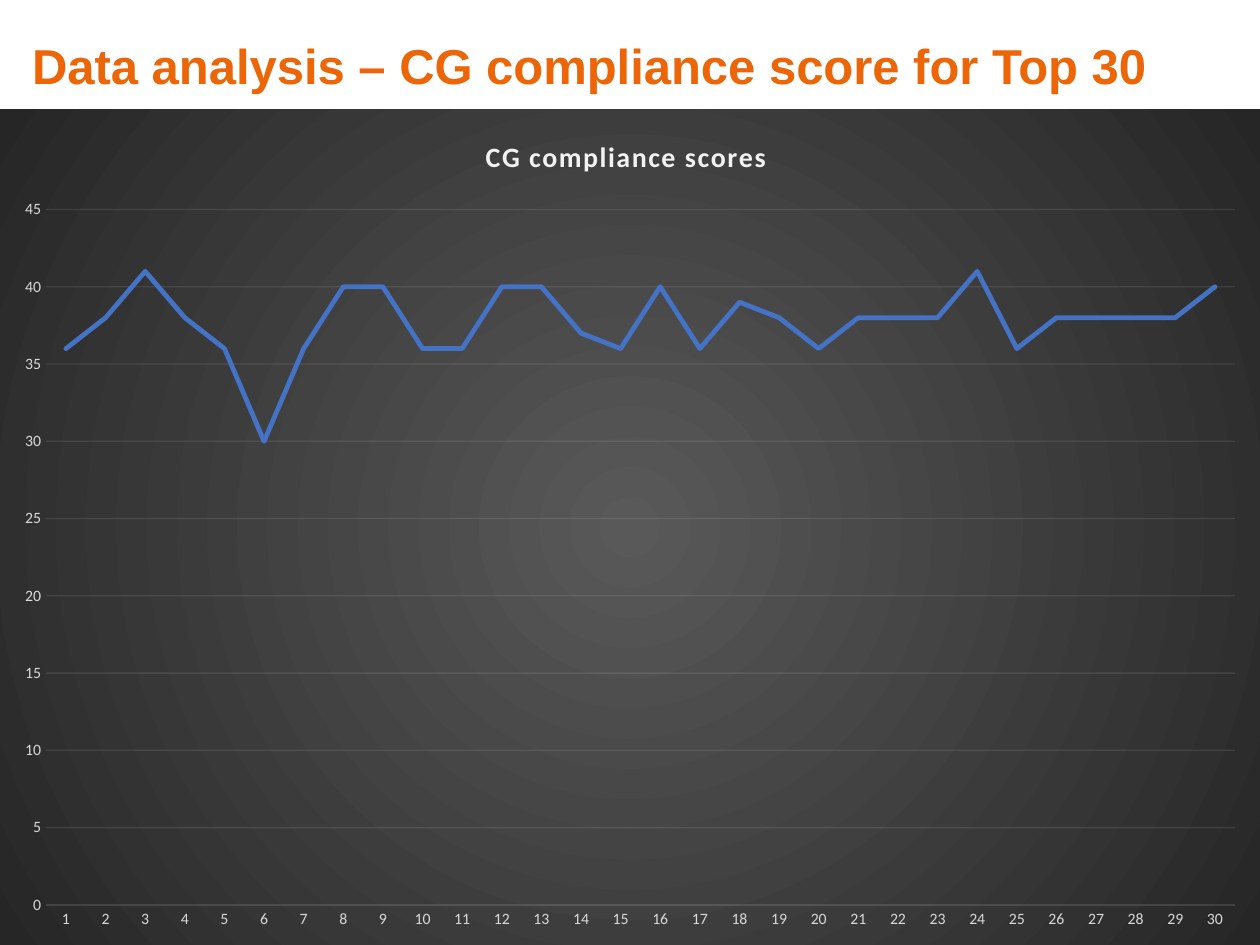
from dataclasses import dataclass

from lxml.etree import SubElement
from pptx import Presentation
from pptx.chart.axis import CategoryAxis, ValueAxis
from pptx.chart.data import CategoryChartData as ChartData
from pptx.dml.color import RGBColor as Rgb
from pptx.dml.line import LineFormat
from pptx.enum.chart import XL_CHART_TYPE as ChartType, XL_TICK_MARK as TickMark
from pptx.enum.text import MSO_ANCHOR as Anchor, MSO_AUTO_SIZE as AutoSize, PP_ALIGN as Align
from pptx.oxml import parse_xml
from pptx.oxml.ns import nsdecls, qn
from pptx.slide import Slide
from pptx.text.text import Font
from pptx.util import Pt


@dataclass(frozen=True)
class Theme:
    heading_font: str = "Arial"
    chart_font: str = "Calibri"
    heading: str = "EC6608"
    chart_title: str = "F2F2F2"
    tick_label: str = "D9D9D9"
    rule: str = "F2F2F2"
    scores: str = "4472C4"
    glow: str = "595959"
    edge: str = "262626"
    heading_size: float = 28
    chart_title_size: float = 16
    chart_size: float = 10
    tick_size: float = 9


THEME = Theme()
SCORES_TITLE = "CG compliance scores "
SCORES = (36, 38, 41, 38, 36, 30, 36, 40, 40, 36, 36, 40, 40, 37, 36,
          40, 36, 39, 38, 36, 38, 38, 38, 41, 36, 38, 38, 38, 38, 40)


def style_font(font: Font, name: str, size: float, color: str, bold: bool = False) -> None:
    font.name, font.size, font.bold = name, Pt(size), bold
    font.color.rgb = Rgb.from_string(color)


def style_rule(line: LineFormat) -> None:
    """Give an axis or gridline a thin line at 10% opacity."""
    line.width = Pt(0.75)
    line.color.rgb = Rgb.from_string(THEME.rule)
    color = line.fill._xPr.find(qn("a:solidFill"))[0]
    SubElement(color, qn("a:alpha"), val="10000")


def style_axis(axis: CategoryAxis | ValueAxis) -> None:
    axis.major_tick_mark = axis.minor_tick_mark = TickMark.NONE
    style_font(axis.tick_labels.font, THEME.chart_font, THEME.tick_size, THEME.tick_label)


def radial_background() -> str:
    return f"""<c:spPr {nsdecls("c", "a")}>
      <a:gradFill><a:gsLst>
        <a:gs pos="0"><a:srgbClr val="{THEME.glow}"/></a:gs>
        <a:gs pos="100000"><a:srgbClr val="{THEME.edge}"/></a:gs>
      </a:gsLst><a:path path="circle">
        <a:fillToRect l="50000" t="50000" r="50000" b="50000"/>
      </a:path></a:gradFill><a:ln><a:noFill/></a:ln></c:spPr>"""


def add_heading(slide: Slide) -> None:
    heading = slide.shapes.title
    heading.left, heading.top, heading.width, heading.height = Pt(0), Pt(0), Pt(720), Pt(64)
    frame = heading.text_frame
    frame.text = "Data analysis – CG compliance score for Top 30"
    frame.auto_size = AutoSize.NONE
    frame.vertical_anchor = Anchor.MIDDLE
    frame.margin_left, frame.margin_top = Pt(18.3), Pt(13.6)
    paragraph = frame.paragraphs[0]
    paragraph.alignment = Align.LEFT
    style_font(paragraph.font, THEME.heading_font, THEME.heading_size, THEME.heading, bold=True)


def add_scores_chart(slide: Slide) -> None:
    scores_data = ChartData()
    scores_data.categories = [str(company) for company in range(1, len(SCORES) + 1)]
    scores_data.add_series(SCORES_TITLE, SCORES)
    chart = slide.shapes.add_chart(
        ChartType.LINE, Pt(0), Pt(62.5), Pt(720), Pt(477.5), scores_data).chart
    chart.has_legend = False
    chart.font.name, chart.font.size = THEME.chart_font, Pt(THEME.chart_size)
    chart._chartSpace.find(qn("c:chart")).addnext(parse_xml(radial_background()))

    chart.has_title = True
    chart.chart_title.include_in_layout = False
    title_frame = chart.chart_title.text_frame
    title_frame.text = SCORES_TITLE
    title_font = title_frame.paragraphs[0].font
    style_font(title_font, THEME.chart_font, THEME.chart_title_size, THEME.chart_title, bold=True)
    title_font._rPr.set("spc", "100")

    companies, values = chart.category_axis, chart.value_axis
    for axis in (companies, values):
        style_axis(axis)
    style_rule(companies.format.line)
    values.format.line.fill.background()
    values.minimum_scale, values.maximum_scale, values.major_unit = 0, 45, 5
    values.has_major_gridlines = True
    style_rule(values.major_gridlines.format.line)

    plot = chart.plots[0]
    plot.vary_by_categories = False
    scores = plot.series[0]
    scores.smooth = False
    scores.format.line.width = Pt(2.75)
    scores.format.line.color.rgb = Rgb.from_string(THEME.scores)
    scores.format.line._ln.set("cap", "rnd")


def main() -> None:
    deck = Presentation()
    deck.slide_width, deck.slide_height = Pt(720), Pt(540)
    slide = deck.slides.add_slide(deck.slide_layouts.get_by_name("Title Only"))
    add_heading(slide)
    add_scores_chart(slide)
    deck.save("out.pptx")


if __name__ == "__main__":
    main()
